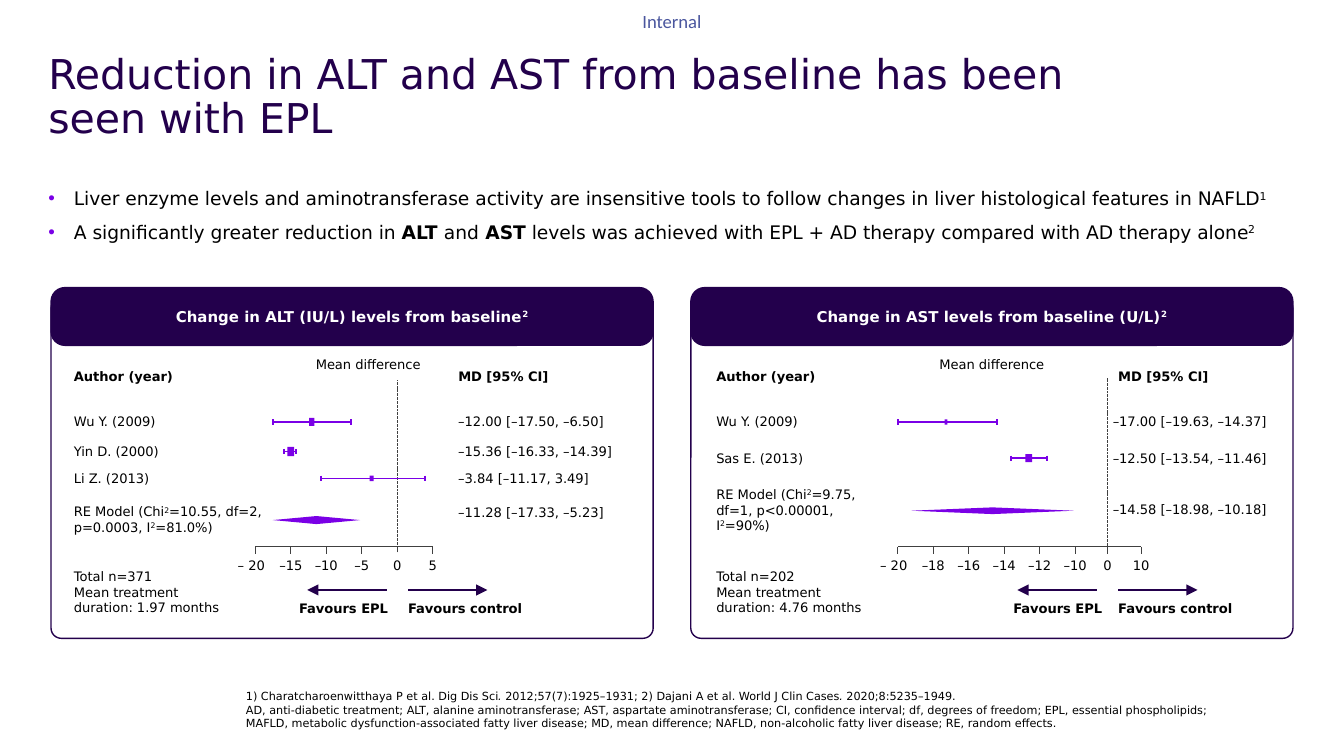
import pptx
import pptx.util
import pptx.dml.color
import pptx.enum.dml
import pptx.enum.shapes
import pptx.enum.text
import pptx.oxml.ns
from lxml import etree

Inches, Pt = pptx.util.Inches, pptx.util.Pt
Shape = pptx.enum.shapes.MSO_SHAPE
Align = pptx.enum.text.PP_ALIGN
Anchor = pptx.enum.text.MSO_ANCHOR
qn = pptx.oxml.ns.qn


class Theme:
    font, label_font = "DejaVu Sans", "Calibri"
    navy, violet, grey, black, white, blue = "23004C", "7A00E6", "404040", "000000", "FFFFFF", "4A569E"
    title, body, heading, small, note = 22, 10, 8, 7, 6


# Content: *bold*, ^superscript^, _italic_
LABEL = "Internal"
TITLE = ["Reduction in ALT and AST from baseline has been \nseen with EPL"]
BULLETS = [
    "Liver enzyme levels and aminotransferase activity are insensitive tools to follow changes "
    "in liver histological features in NAFLD^1^",
    "A significantly greater reduction in *ALT *and* AST* levels was achieved with EPL + AD therapy "
    "compared with AD therapy alone^2^",
]
NOTES = [
    "1) Charatcharoenwitthaya P et al. Dig Dis Sci_._ 2012;57(7):1925–1931; "
    "2) Dajani A et al. World J Clin Cases_._ 2020;8:5235–1949.",
    "AD, anti-diabetic treatment; ALT, alanine aminotransferase; AST, aspartate aminotransferase; "
    "CI, confidence interval; df, degrees of freedom; EPL, essential phospholipids; \n"
    "MAFLD, metabolic dysfunction-associated fatty liver disease; MD, mean difference; "
    "NAFLD, non-alcoholic fatty liver disease; RE, random effects.",
]
# Horizontal plot places count tick steps from the axis start.
# Study: author, result, row, (low, mean, high), marker width and height in inches
PANELS = [
    dict(heading="Change in ALT (IU/L) levels from baseline^2^",
         author=0.55, result=3.41, result_head=3.41, axis=1.9, caption=3.18, rule=(2.83, 4.11),
         favours_gap=0.07, zero_tick=False,
         ticks=[("– 20", 0), ("–15", 1), ("–10", 2), ("–5", 3), ("0", 4), ("5", 5)],
         studies=[("Wu Y. (2009)", "–12.00 [–17.50, –6.50]", 3.14, (0.49, 1.59, 2.69), (0.04, 0.06)),
                  ("Yin D. (2000)", "–15.36 [–16.33, –14.39]", 3.36, (0.8, 1, 1.14), (0.05, 0.07)),
                  ("Li Z. (2013)", "–3.84 [–11.17, 3.49]", 3.56, (1.86, 3.28, 4.77), (0.03, 0.04))],
         model=("RE Model (Chi^2^=10.55, df=2, p=0.0003, I^2^=81.0%)", 3.75, 0.24),
         pooled=("–11.28 [–17.33, –5.23]", 3.75), diamond=(0.49, 2.95, 3.87, 0.06),
         total=["Total n=371", "Mean treatment \nduration: 1.97 months"]),
    dict(heading="Change in AST levels from baseline (U/L)^2^",
         author=5.33, result=8.28, result_head=8.32, axis=6.68, caption=2.65, rule=(2.81, 4.09),
         favours_gap=0.04, zero_tick=True,
         ticks=[("– 20", 0), ("–18", 1), ("–16", 2), ("–14", 3), ("–12", 4), ("–10", 5),
                ("0", 5.91), ("10", 6.86)],
         studies=[("Wu Y. (2009)", "–17.00 [–19.63, –14.37]", 3.14, (0, 1.36, 2.8), (0.02, 0.04)),
                  ("Sas E. (2013)", "–12.50 [–13.54, –11.46]", 3.41, (3.18, 3.69, 4.2), (0.05, 0.06))],
         model=("RE Model (Chi^2^=9.75,\ndf=1, p<0.00001, \nI^2^=90%)", 3.62, 0.35),
         pooled=("–14.58 [–18.98, –10.18]", 3.73), diamond=(0.38, 4.96, 3.8, 0.05),
         total=["Total n=202", "Mean treatment \nduration: 4.76 months"]),
]
PANEL_LEFT, PANEL_PITCH, PANEL_WIDTH = 0.38, 4.76, 4.48
STEP, AXIS_Y, ARROW_Y, LINE_HEIGHT = 1.32 / 5, 4.07, 4.39, 0.12

# Widescreen page, 16 to 9
deck = pptx.Presentation()
deck.slide_width = Inches(10)
deck.slide_height = Inches(10) * 9 // 16
page = deck.slides.add_slide(deck.slide_layouts[1])


def rgb(colour):
    return pptx.dml.color.RGBColor.from_string(colour)


def add_runs(para, text, size, colour, bold=False, font=Theme.font):
    marks = {"*": False, "^": False, "_": False}

    def flush(words):
        if not words:
            return
        span = para.add_run()
        span.text = words
        span.font.name, span.font.size = font, Pt(size)
        span.font.color.rgb = rgb(colour)
        span.font.bold = bold or marks["*"]
        span.font.italic = marks["_"]
        if marks["^"]:
            span._r.get_or_add_rPr().set("baseline", "30000")

    words = ""
    for letter in text:
        if letter in marks or letter == "\n":
            flush(words)
            words = ""
            if letter == "\n":
                para.add_line_break()
            else:
                marks[letter] = not marks[letter]
        else:
            words += letter
    flush(words)


def fill_text(box, texts, size, colour=Theme.black, align=Align.LEFT, anchor=Anchor.TOP,
              margin=0, spacing=None, bullet=False, **style):
    frame = box.text_frame
    frame.word_wrap, frame.vertical_anchor = True, anchor
    frame.auto_size = pptx.enum.text.MSO_AUTO_SIZE.NONE
    frame.margin_left = frame.margin_right = frame.margin_top = frame.margin_bottom = Inches(margin)
    for index, text in enumerate(texts):
        para = frame.paragraphs[0] if index == 0 else frame.add_paragraph()
        if bullet:
            props = para._p.get_or_add_pPr()
            props.set("marL", str(Inches(0.19)))
            props.set("indent", str(-Inches(0.19)))
            tint = etree.SubElement(props, qn("a:buClr"))
            etree.SubElement(tint, qn("a:srgbClr")).set("val", Theme.violet)
            etree.SubElement(props, qn("a:buChar")).set("char", "•")
        para.alignment, para.space_before = align, Pt(0)
        if spacing:
            para.line_spacing = spacing
        add_runs(para, text, size, colour, **style)


def add_text(left, top, width, height, texts, size=Theme.small, **options):
    box = page.shapes.add_textbox(*map(Inches, (left, top, width, height)))
    fill_text(box, texts, size, **options)


def add_block(kind, left, top, width, height, fill=None, line=None, corner=None):
    block = page.shapes.add_shape(kind, *map(Inches, (left, top, width, height)))
    block.shadow.inherit = False
    if corner:
        block.adjustments[0] = corner
    if fill:
        block.fill.solid()
        block.fill.fore_color.rgb = rgb(fill)
    else:
        block.fill.background()
    if line:
        block.line.color.rgb, block.line.width = rgb(line), Pt(0.75)
    else:
        block.line.fill.background()
    return block


def add_line(x1, y1, x2, y2, colour=Theme.grey, weight=0.5, dashed=False, arrow=False):
    line = page.shapes.add_connector(pptx.enum.shapes.MSO_CONNECTOR.STRAIGHT, *map(Inches, (x1, y1, x2, y2)))
    line.line.color.rgb, line.line.width = rgb(colour), Pt(weight)
    if dashed:
        line.line.dash_style = pptx.enum.dml.MSO_LINE.SQUARE_DOT
    if arrow:
        etree.SubElement(line.line._get_or_add_ln(), qn("a:tailEnd")).set("type", "triangle")
    etree.SubElement(line._element.spPr, qn("a:effectLst"))


def draw_panel(left, panel):
    author, result = panel["author"], panel["result"]

    def place(steps):
        return panel["axis"] + steps * STEP

    # Frame, heading and column heads
    add_block(Shape.ROUNDED_RECTANGLE, left, 2.22, PANEL_WIDTH, 2.53, line=Theme.navy, corner=0.03)
    bar = add_block(Shape.ROUNDED_RECTANGLE, left, 2.14, PANEL_WIDTH, 0.43, Theme.navy, Theme.navy, 0.24)
    fill_text(bar, [panel["heading"]], Theme.heading, Theme.white, Align.CENTER, Anchor.MIDDLE, 0.04, bold=True)
    add_text(author, 2.74, 0.78, LINE_HEIGHT, ["Author (year)"], bold=True)
    add_text(panel["result_head"], 2.74, 0.78, LINE_HEIGHT, ["MD [95% CI]"], bold=True)
    add_text(place(panel["caption"]) - 0.66, 2.65, 1.32, LINE_HEIGHT, ["Mean difference"], align=Align.CENTER)

    # Axis, ticks and zero rule
    ticks = panel["ticks"]
    zero = place(dict(ticks)["0"])
    add_line(place(0), AXIS_Y, place(ticks[-1][1]), AXIS_Y)
    for label, steps in ticks:
        x = place(steps)
        if label != "0" or panel["zero_tick"]:
            add_line(x, AXIS_Y, x, AXIS_Y + 0.05)
        centre = x - (0.03 if steps == 0 else 0)
        add_text(centre - 0.12, 4.15, 0.24, LINE_HEIGHT, [label], align=Align.CENTER)
    top, bottom = panel["rule"]
    add_line(zero, bottom, zero, top, dashed=True)

    # Studies with their intervals
    for name, values, y, (low, mean, high), (width, height) in panel["studies"]:
        add_text(author, y - 0.06, 0.7, LINE_HEIGHT, [name])
        add_text(result, y - 0.06, 1.26, LINE_HEIGHT, [values])
        add_line(place(high), y, place(low), y, Theme.violet, 1)
        for end in (high, low):
            add_line(place(end), y - 0.02, place(end), y + 0.02, Theme.violet, 1)
        add_block(Shape.RECTANGLE, place(mean) - width / 2, y - height / 2, width, height, Theme.violet)

    # Pooled effect and totals
    low, high, y, height = panel["diamond"]
    add_block(Shape.FLOWCHART_DECISION, place(low), y - height / 2, (high - low) * STEP, height, Theme.violet)
    text, y, height = panel["model"]
    add_text(author, y, 1.54, height, [text])
    text, y = panel["pooled"]
    add_text(result, y, 1.26, LINE_HEIGHT, [text])
    add_text(author, 4.23, 1.4, 0.35, panel["total"])

    # Directions of effect
    for side in (-1, 1):
        add_line(zero + side * 0.08, ARROW_Y, zero + side * 0.67, ARROW_Y, Theme.navy, 1, arrow=True)
    add_text(zero - panel["favours_gap"] - 1.32, 4.47, 1.32, LINE_HEIGHT, ["Favours EPL"], align=Align.RIGHT, bold=True)
    add_text(zero + 0.08, 4.47, 1.15, LINE_HEIGHT, ["Favours control"], bold=True)


# Title, bullets, label and notes
title, body = page.shapes.title, page.placeholders[1]
for holder, area in ((title, (0.36, 0.4, 9.28, 0.79)), (body, (0.36, 1.31, 9.27, 3.51))):
    holder.left, holder.top, holder.width, holder.height = map(Inches, area)
fill_text(title, TITLE, Theme.title, Theme.navy, spacing=0.9)
fill_text(body, BULLETS, Theme.body, spacing=1.5, bullet=True)
add_text(4.78, 0.07, 0.47, 0.17, [LABEL], Theme.body, colour=Theme.blue, font=Theme.label_font)
add_text(1.83, 5.07, 7.81, 0.36, NOTES, Theme.note, anchor=Anchor.BOTTOM)

# Forest plots
for column, panel in enumerate(PANELS):
    draw_panel(PANEL_LEFT + column * PANEL_PITCH, panel)

deck.save("out.pptx")
